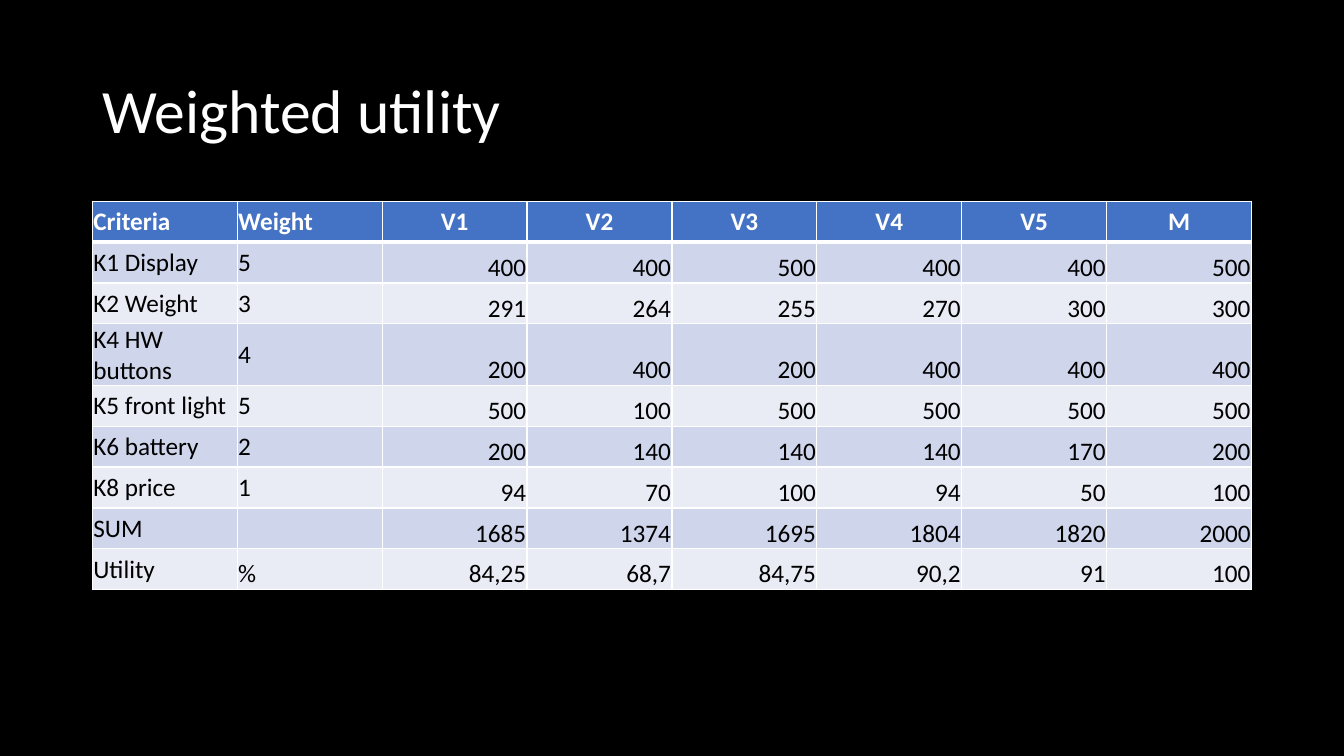
from lxml.etree import SubElement
from pptx import Presentation
from pptx.dml.color import RGBColor
from pptx.enum.text import MSO_ANCHOR, PP_ALIGN
from pptx.oxml.ns import qn
from pptx.util import Pt

HEADER = ["Criteria", "Weight", "V1", "V2", "V3", "V4", "V5", "M"]
ROWS = [
    ["K1 Display", "5", "400", "400", "500", "400", "400", "500"],
    ["K2 Weight", "3", "291", "264", "255", "270", "300", "300"],
    ["K4 HW buttons", "4", "200", "400", "200", "400", "400", "400"],
    ["K5 front light", "5", "500", "100", "500", "500", "500", "500"],
    ["K6 battery", "2", "200", "140", "140", "140", "170", "200"],
    ["K8 price", "1", "94", "70", "100", "94", "50", "100"],
    ["SUM", "", "1685", "1374", "1695", "1804", "1820", "2000"],
    ["Utility", "%", "84,25", "68,7", "84,75", "90,2", "91", "100"],
]


def rgb(color):
    return RGBColor.from_string(color)


def set_all(obj, values):
    for name, value in values.items():
        setattr(obj, name, value)


class Deck:
    font = "Calibri"
    white, black = "FFFFFF", "000000"
    header_fill, bands = "4472C4", ("CFD5EA", "E9EBF5")
    cell_format = {"margin_left": Pt(0.7), "margin_top": Pt(0.7),
                   "margin_right": Pt(0.7), "margin_bottom": Pt(0)}

    def __init__(self, prs):
        self.s = prs.slides.add_slide(prs.slide_layouts[6])
        fill = self.s.background.fill
        fill.solid()
        fill.fore_color.rgb = rgb(self.black)

    def add_text(self, tf, text, size, color, align=PP_ALIGN.LEFT, bold=False):
        p = tf.paragraphs[0]
        p.alignment = align
        r = p.add_run()
        r.text = text
        set_all(r.font, {"name": self.font, "size": Pt(size), "bold": bold})
        r.font.color.rgb = rgb(color)
        return p

    def title(self, text, left, top, width, height):
        box = self.s.shapes.add_textbox(Pt(left), Pt(top), Pt(width), Pt(height))
        tf = box.text_frame
        set_all(tf, {"word_wrap": True, "vertical_anchor": MSO_ANCHOR.MIDDLE})
        self.add_text(tf, text, 44, self.white).line_spacing = 0.9

    def borders(self, cell, top, bottom):
        """Draw white cell edges; top and bottom are widths in points."""
        tcPr = cell._tc.get_or_add_tcPr()
        for side, width in (("L", 1), ("R", 1), ("T", top), ("B", bottom)):
            ln = SubElement(tcPr, qn(f"a:ln{side}"), w=str(Pt(width)))
            fill = SubElement(ln, qn("a:solidFill"))
            SubElement(fill, qn("a:srgbClr"), val=self.white)

    def cell(self, cell, text, row, col):
        is_header = row == 0
        is_value = col > 1 and not is_header
        at_bottom = is_value or text == "%"
        set_all(cell, self.cell_format)
        cell.vertical_anchor = MSO_ANCHOR.BOTTOM if at_bottom else MSO_ANCHOR.MIDDLE
        self.borders(cell, 3 if row == 1 else 1, 3 if is_header else 1)
        cell.fill.solid()
        cell.fill.fore_color.rgb = rgb(
            self.header_fill if is_header else self.bands[(row - 1) % 2])
        if not text:
            return
        align = PP_ALIGN.RIGHT if is_value else PP_ALIGN.CENTER if col > 1 else PP_ALIGN.LEFT
        self.add_text(cell.text_frame, text, 18,
                      self.white if is_header else self.black, align, is_header)

    def table(self, data, left, top, width, row_height):
        frame = self.s.shapes.add_table(len(data), len(data[0]), Pt(left), Pt(top),
                                        Pt(width), Pt(row_height * len(data)))
        tbl = frame.table
        for column in tbl.columns:
            column.width = Pt(width / len(data[0]))
        for i, values in enumerate(data):
            tbl.rows[i].height = Pt(row_height)
            for j, text in enumerate(values):
                self.cell(tbl.cell(i, j), text, i, j)


def main():
    prs = Presentation()
    set_all(prs, {"slide_width": Pt(960), "slide_height": Pt(540)})
    deck = Deck(prs)
    deck.title("Weighted utility", 66, 28.75, 828, 104.4)
    deck.table([HEADER] + ROWS, 66, 143.75, 828, 29.2)
    prs.save("out.pptx")


if __name__ == "__main__":
    main()
